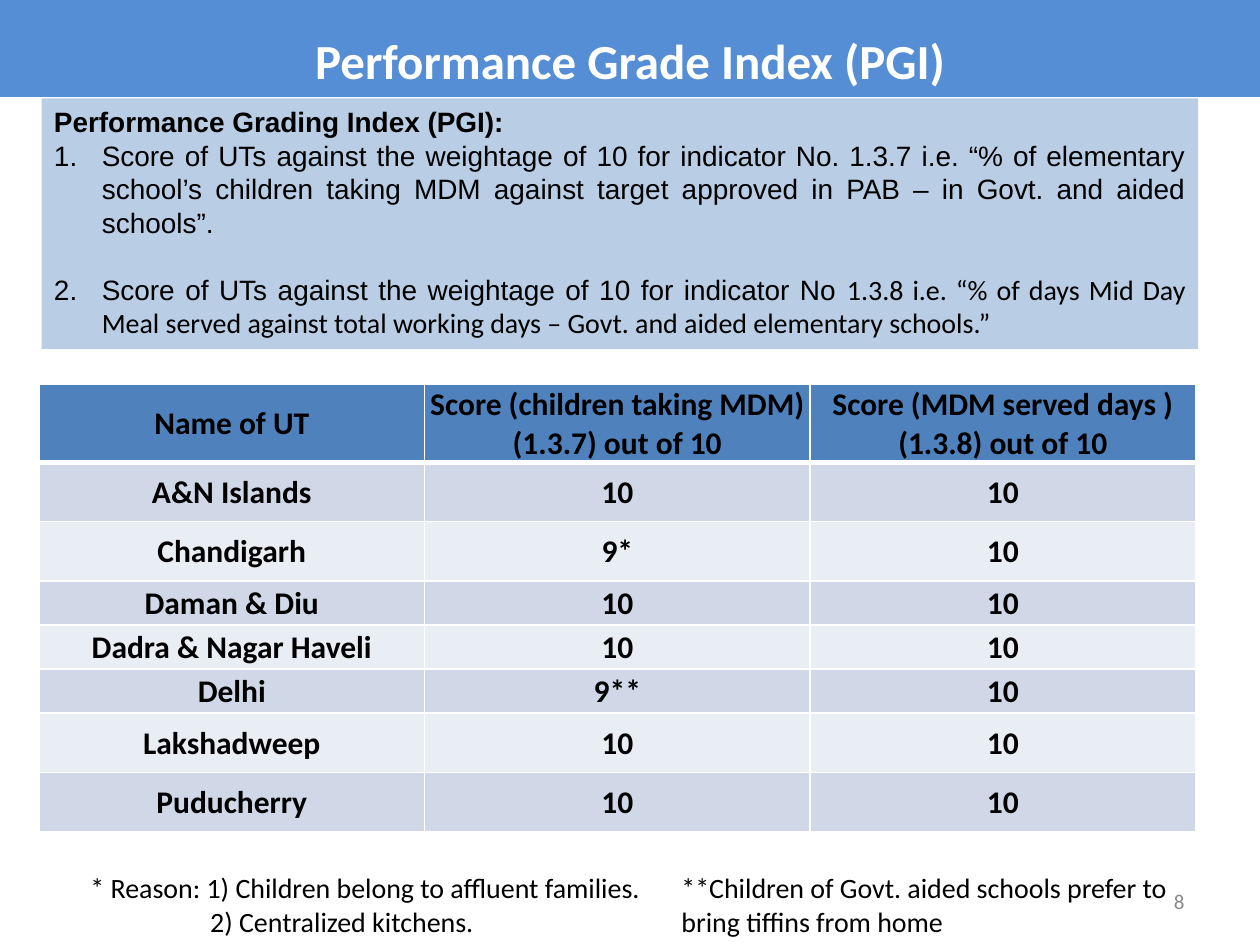
from dataclasses import dataclass

import lxml.etree
import pptx
import pptx.dml.color
import pptx.enum.shapes
import pptx.enum.text
import pptx.oxml.ns
import pptx.util

Inches = pptx.util.Inches
Pt = pptx.util.Pt
Align = pptx.enum.text.PP_ALIGN
Anchor = pptx.enum.text.MSO_ANCHOR
qn = pptx.oxml.ns.qn


@dataclass(frozen=True)
class Theme:
    banner: str = "558ED5"
    panel: str = "B9CDE5"
    header: str = "4F81BD"
    bands: tuple[str, str] = ("D0D8E8", "E9EDF4")
    white: str = "FFFFFF"
    black: str = "000000"
    grey: str = "898989"
    heading_font: str = "Calibri"
    panel_font: str = "Arial"
    title_size: int = 28
    table_size: int = 18
    body_size: int = 16
    number_size: int = 12


@dataclass(frozen=True)
class Area:
    left: float
    top: float
    width: float
    height: float

    def lengths(self) -> tuple:
        return tuple(Inches(v) for v in (self.left, self.top, self.width, self.height))


@dataclass(frozen=True)
class Score:
    territory: str
    children: str
    days: str
    height: float = 0.47


THEME = Theme()
HEADINGS = (
    "Name of UT",
    "Score (children taking MDM)\n(1.3.7) out of 10",
    "Score (MDM served days )\n(1.3.8) out of 10",
)
HEADER_HEIGHT = 0.6
SCORES = (
    Score("A&N Islands", "10", "10"),
    Score("Chandigarh", "9*", "10"),
    Score("Daman & Diu", "10", "10", 0.35),
    Score("Dadra & Nagar Haveli", "10", "10", 0.35),
    Score("Delhi", "9**", "10", 0.35),
    Score("Lakshadweep", "10", "10"),
    Score("Puducherry", "10", "10"),
)


def rgb(value: str) -> pptx.dml.color.RGBColor:
    return pptx.dml.color.RGBColor.from_string(value)


def add_span(para, text: str, *, size: int = THEME.body_size, font: str = THEME.heading_font,
             color: str = THEME.black, bold: bool = False) -> None:
    span = para.add_run()
    span.text = text
    span.font.size = Pt(size)
    span.font.name = font
    span.font.bold = bold
    span.font.color.rgb = rgb(color)


def next_para(frame, align=Align.LEFT):
    first = frame.paragraphs[0]
    para = frame.add_paragraph() if first.runs else first
    para.alignment = align
    return para


def indent(para, left: float, first: float = 0) -> None:
    properties = para._p.get_or_add_pPr()
    properties.set("marL", str(Inches(left)))
    properties.set("indent", str(Inches(first)))


def number_para(para, number: int) -> None:
    indent(para, 0.38, -0.38)
    properties = para._p.get_or_add_pPr()
    lxml.etree.SubElement(properties, qn("a:buFont"), typeface="+mj-lt")
    lxml.etree.SubElement(properties, qn("a:buAutoNum"), type="arabicPeriod", startAt=str(number))


def add_box(page, area: Area, fill: str, anchor=Anchor.TOP):
    box = page.shapes.add_shape(pptx.enum.shapes.MSO_SHAPE.RECTANGLE, *area.lengths())
    box.shadow.inherit = False
    box.fill.solid()
    box.fill.fore_color.rgb = rgb(fill)
    box.line.fill.background()
    box.text_frame.word_wrap = True
    box.text_frame.vertical_anchor = anchor
    return box.text_frame


def add_text(page, area: Area, anchor=Anchor.TOP):
    frame = page.shapes.add_textbox(*area.lengths()).text_frame
    frame.word_wrap = True
    frame.vertical_anchor = anchor
    return frame


def add_border(cell, side: str, width: float) -> None:
    line = lxml.etree.SubElement(cell._tc.get_or_add_tcPr(), qn(f"a:ln{side}"), w=str(Pt(width)))
    fill = lxml.etree.SubElement(line, qn("a:solidFill"))
    lxml.etree.SubElement(fill, qn("a:srgbClr"), val=THEME.white)


def fill_cell(cell, text: str, row: int) -> None:
    cell.margin_left = cell.margin_right = cell.margin_top = Inches(0.01)
    cell.margin_bottom = 0
    cell.vertical_anchor = Anchor.MIDDLE
    for side in "LRTB":
        under_header = (row, side) in ((0, "B"), (1, "T"))
        add_border(cell, side, 3 if under_header else 1)
    cell.fill.solid()
    cell.fill.fore_color.rgb = rgb(THEME.bands[(row - 1) % 2] if row else THEME.header)
    for line in text.split("\n"):
        add_span(next_para(cell.text_frame, Align.CENTER), line, size=THEME.table_size, bold=True)


def add_score_table(page, area: Area) -> None:
    rows = [HEADINGS] + [(s.territory, s.children, s.days) for s in SCORES]
    heights = [HEADER_HEIGHT] + [s.height for s in SCORES]
    table = page.shapes.add_table(len(rows), len(HEADINGS), *area.lengths()).table
    for column in table.columns:
        column.width = Inches(area.width / len(HEADINGS))
    for row, (texts, height) in enumerate(zip(rows, heights)):
        table.rows[row].height = Inches(height)
        for column, text in enumerate(texts):
            fill_cell(table.cell(row, column), text, row)


def add_title(page) -> None:
    frame = add_box(page, Area(0, 0, 10, 0.77), THEME.banner, Anchor.MIDDLE)
    para = next_para(frame, Align.CENTER)
    para.line_spacing = 1.4
    add_span(para, "Performance Grade Index (PGI)", size=THEME.title_size,
             color=THEME.white, bold=True)


def add_index_panel(page) -> None:
    frame = add_box(page, Area(0.33, 0.78, 9.18, 1.99), THEME.panel)
    add_span(next_para(frame, Align.JUSTIFY), "Performance Grading Index (PGI):",
             font=THEME.panel_font, bold=True)
    children = next_para(frame, Align.JUSTIFY)
    number_para(children, 1)
    add_span(children, "Score of UTs against the weightage of 10 for indicator No. 1.3.7 i.e. "
             "“% of elementary school’s children taking MDM against target approved in PAB – "
             "in Govt. and aided schools”.", font=THEME.panel_font)
    days = next_para(frame, Align.JUSTIFY)
    days.space_before = Pt(19)
    number_para(days, 2)
    add_span(days, "Score of UTs against the weightage of 10 for indicator No ",
             font=THEME.panel_font)
    add_span(days, "1.3.8 i.e. “% of days Mid Day Meal served against total working days – "
             "Govt. and aided elementary schools.”")


def add_footnotes(page) -> None:
    number = add_text(page, Area(7.17, 6.95, 2.33, 0.4), Anchor.MIDDLE)
    add_span(next_para(number, Align.RIGHT), "8", size=THEME.number_size, color=THEME.grey)
    reasons = add_text(page, Area(0.62, 6.86, 8.36, 0.64))
    add_span(next_para(reasons), "* Reason: 1) Children belong to affluent families.")
    second = next_para(reasons)
    indent(second, 0.95)
    add_span(second, "2) Centralized kitchens.")
    delhi = add_text(page, Area(5.31, 6.86, 4.49, 0.64))
    add_span(next_para(delhi),
             "**Children of Govt. aided schools prefer to bring tiffins from home")


def main() -> None:
    deck = pptx.Presentation()
    deck.slide_width, deck.slide_height = Inches(10), Inches(7.5)
    page = deck.slides.add_slide(deck.slide_layouts[6])
    add_title(page)
    add_score_table(page, Area(0.31, 3.05, 9.18, 3.53))
    add_index_panel(page)
    add_footnotes(page)
    deck.save("out.pptx")


if __name__ == "__main__":
    main()
